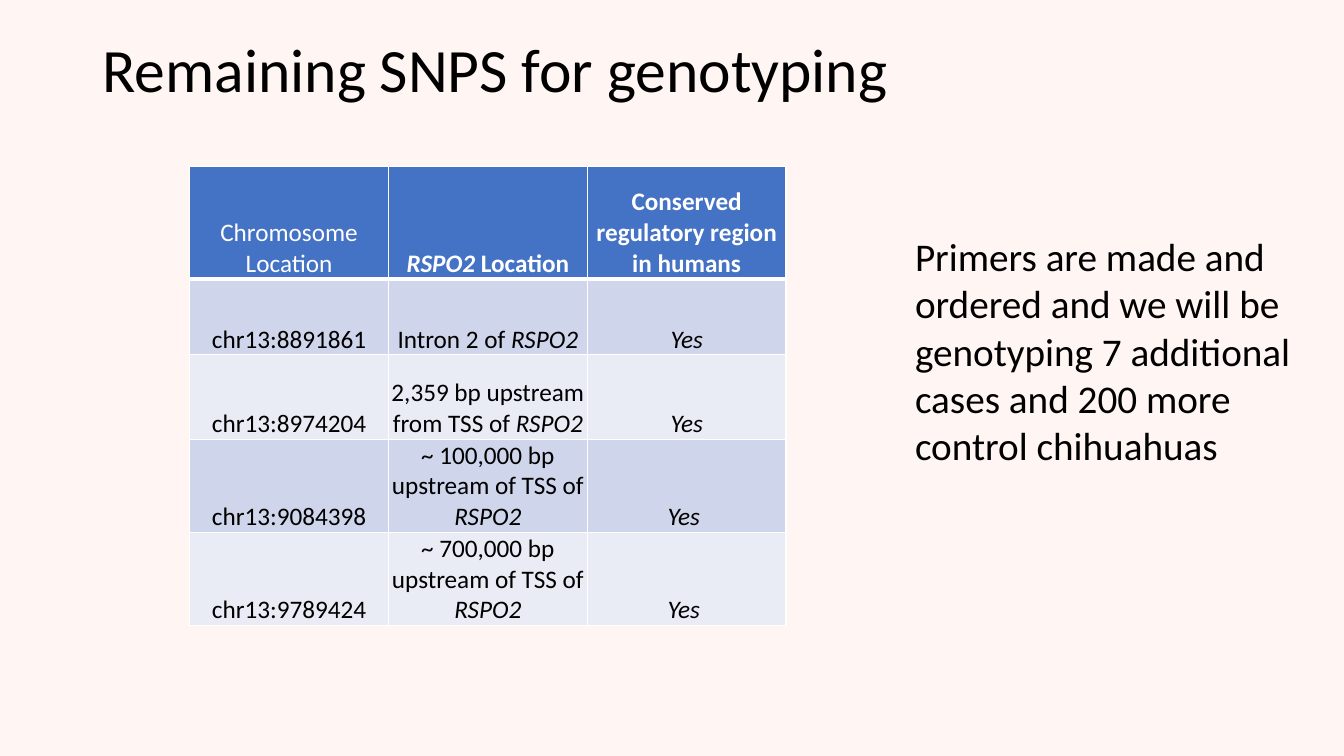
from dataclasses import dataclass

from lxml.etree import SubElement
from pptx import Presentation
from pptx.dml.color import RGBColor
from pptx.enum.text import MSO_ANCHOR, MSO_AUTO_SIZE, PP_ALIGN
from pptx.oxml.ns import qn
from pptx.slide import Slide
from pptx.table import _Cell
from pptx.text.text import TextFrame
from pptx.util import Cm, Pt


@dataclass(frozen=True)
class Theme:
    font: str = "Calibri"
    background: str = "FFF5F3"
    text: str = "000000"
    header_text: str = "FFFFFF"
    header_fill: str = "4472C4"
    bands: tuple[str, str] = ("CFD5EA", "E9EBF5")
    border: str = "FFFFFF"
    title_size: int = 44
    note_size: int = 28
    table_size: int = 18


@dataclass(frozen=True)
class Span:
    text: str
    bold: bool = False
    italic: bool = False


@dataclass(frozen=True)
class Row:
    height: float
    cells: tuple[tuple[Span, ...], ...]


THEME = Theme()
GENE = Span("RSPO2", italic=True)
COLUMN_WIDTH = 5.01


def snp_row(height: float, locus: str, place: str, conserved: str) -> Row:
    return Row(height, ((Span(locus),), (Span(place), GENE), (Span(conserved, italic=True),)))


ROWS = (
    Row(2.84, (
        (Span("Chromosome Location"),),
        (Span("RSPO2 ", bold=True, italic=True), Span("Location", bold=True)),
        (Span("Conserved regulatory region in humans", bold=True),),
    )),
    snp_row(1.91, "chr13:8891861", "Intron 2 of ", "Yes"),
    snp_row(2.13, "chr13:8974204", "2,359 bp upstream from TSS of ", "Yes"),
    snp_row(2.21, "chr13:9084398", "~ 100,000 bp upstream of TSS of ", "Yes "),
    snp_row(2.21, "chr13:9789424", "~ 700,000 bp upstream of TSS of ", "Yes "),
)


def apply_format(target: object, values: dict[str, object]) -> None:
    for name, value in values.items():
        setattr(target, name, value)


def write_spans(frame: TextFrame, spans: tuple[Span, ...], size: int, color: str,
                alignment: PP_ALIGN = PP_ALIGN.LEFT) -> None:
    paragraph = frame.paragraphs[0]
    paragraph.alignment = alignment
    for span in spans:
        run = paragraph.add_run()
        run.text = span.text
        apply_format(run.font, {"name": THEME.font, "size": Pt(size),
                                "bold": span.bold, "italic": span.italic})
        run.font.color.rgb = RGBColor.from_string(color)


def add_borders(cell: _Cell, top: int, bottom: int) -> None:
    """Draw the four cell borders, with top and bottom widths in points."""
    properties = cell._tc.get_or_add_tcPr()
    for tag, width in (("a:lnL", 1), ("a:lnR", 1), ("a:lnT", top), ("a:lnB", bottom)):
        line = SubElement(properties, qn(tag), w=str(Pt(width)))
        fill = SubElement(line, qn("a:solidFill"))
        SubElement(fill, qn("a:srgbClr"), val=THEME.border)


def add_title(slide: Slide) -> None:
    title = slide.shapes.title
    apply_format(title, {"left": Cm(2.33), "top": Cm(0), "width": Cm(29.21), "height": Cm(3.68)})
    apply_format(title.text_frame, {"vertical_anchor": MSO_ANCHOR.MIDDLE, "word_wrap": True,
                                    "auto_size": MSO_AUTO_SIZE.NONE})
    write_spans(title.text_frame, (Span("Remaining SNPS for genotyping"),),
                THEME.title_size, THEME.text)
    title.text_frame.paragraphs[0].line_spacing = 0.9


def add_snp_table(slide: Slide) -> None:
    columns = len(ROWS[0].cells)
    table = slide.shapes.add_table(
        len(ROWS), columns, Cm(4.78), Cm(4.19), Cm(columns * COLUMN_WIDTH),
        Cm(sum(row.height for row in ROWS))).table
    for column in table.columns:
        column.width = Cm(COLUMN_WIDTH)
    for index, row in enumerate(ROWS):
        table.rows[index].height = Cm(row.height)
        header = index == 0
        fill = THEME.header_fill if header else THEME.bands[(index - 1) % 2]
        color = THEME.header_text if header else THEME.text
        for position, spans in enumerate(row.cells):
            cell = table.cell(index, position)
            add_borders(cell, top=3 if index == 1 else 1, bottom=3 if header else 1)
            cell.fill.solid()
            cell.fill.fore_color.rgb = RGBColor.from_string(fill)
            apply_format(cell, {"vertical_anchor": MSO_ANCHOR.BOTTOM, "margin_left": Cm(0.02),
                                "margin_top": Cm(0.02), "margin_right": Cm(0.02),
                                "margin_bottom": Cm(0)})
            write_spans(cell.text_frame, spans, THEME.table_size, color, PP_ALIGN.CENTER)


def add_note(slide: Slide) -> None:
    note = slide.shapes.add_textbox(Cm(22.81), Cm(5.74), Cm(10.62), Cm(6.25))
    apply_format(note.text_frame, {"word_wrap": True,
                                   "auto_size": MSO_AUTO_SIZE.SHAPE_TO_FIT_TEXT})
    write_spans(note.text_frame, (Span(
        "Primers are made and ordered and we will be genotyping 7 additional cases "
        "and 200 more control chihuahuas"),), THEME.note_size, THEME.text)


def main() -> None:
    presentation = Presentation()
    apply_format(presentation, {"slide_width": Cm(33.87), "slide_height": Cm(19.05)})
    slide = presentation.slides.add_slide(presentation.slide_layouts.get_by_name("Title Only"))
    slide.background.fill.solid()
    slide.background.fill.fore_color.rgb = RGBColor.from_string(THEME.background)
    add_title(slide)
    add_snp_table(slide)
    add_note(slide)
    presentation.save("out.pptx")


if __name__ == "__main__":
    main()
